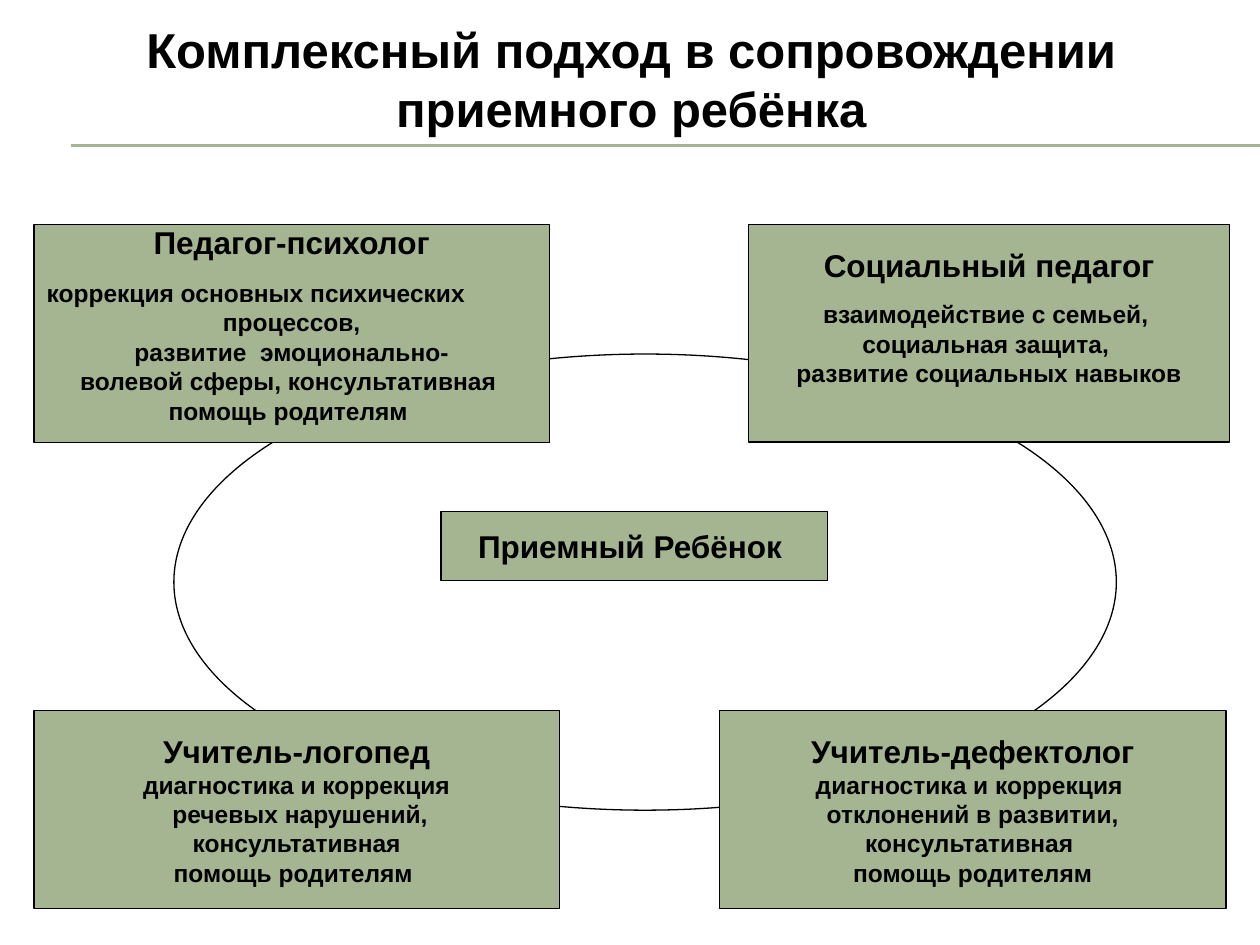
"""Builds a slide on the joint support of a foster child."""
from lxml import etree
from pptx import Presentation
from pptx.dml.color import RGBColor
from pptx.enum.shapes import MSO_CONNECTOR as LINK, MSO_SHAPE as SHAPE
from pptx.enum.text import MSO_ANCHOR as ANCHOR, MSO_AUTO_SIZE as AUTO, PP_ALIGN as ALIGN
from pptx.oxml.ns import qn
from pptx.util import Inches, Pt

GREEN, BLACK = "A5B592", "000000"


def tint(item, code):
    item.rgb = RGBColor.from_string(code)


def style(para, size):
    para.alignment = ALIGN.CENTER
    for run in para.runs:
        font = run.font
        font.name, font.size, font.bold = "Arial", Pt(size), True
        tint(font.color, BLACK)


deck = Presentation()
deck.slide_width, deck.slide_height = Inches(10), Inches(7.5)
slide = deck.slides.add_slide(deck.slide_layouts[1])
shapes = slide.shapes

for y in (1.15, 1.16):
    rule = shapes.add_connector(LINK.STRAIGHT, Inches(0.56), Inches(y), Inches(10), Inches(y))
    rule.line.width = Pt(0.75)
    tint(rule.line.color, GREEN)
    etree.SubElement(rule.element.spPr, qn("a:effectLst"))

title = shapes.title
title.left, title.top, title.width, title.height = Inches(0.51), Inches(0), Inches(9), Inches(1.25)
title.text_frame.text = "Комплексный подход в сопровождении приемного ребёнка"
title.text_frame.auto_size = AUTO.NONE
title.text_frame.vertical_anchor = ANCHOR.MIDDLE
style(title.text_frame.paragraphs[0], 28)

ring = shapes.add_shape(SHAPE.OVAL, Inches(1.38), Inches(2.81), Inches(7.48), Inches(3.62))
ring.shadow.inherit = False
ring.fill.background()
ring.line.width = Pt(0.75)
tint(ring.line.color, BLACK)

body = slide.placeholders[1]
shapes.element.append(body.element)

cards = [
    (body, 0.27, 1.78, 4.09, 1.73, 13, [
        "Педагог-психолог", "коррекция основных психических", "процессов,",
        "развитие  эмоционально-", "волевой сферы, консультативная ", "помощь родителям "]),
    (None, 3.5, 4.06, 3.07, 0.55, 0, ["Приемный Ребёнок "]),
    (None, 5.94, 1.78, 3.82, 1.73, 9, [
        "Социальный педагог", "взаимодействие с семьей, ", "социальная защита, ",
        "развитие социальных навыков"]),
    (None, 5.71, 5.64, 4.02, 1.57, 0, [
        "Учитель-дефектолог", "диагностика и коррекция ", "отклонений в развитии,",
        "консультативная ", "помощь родителям"]),
    (None, 0.27, 5.64, 4.17, 1.57, 0, [
        "Учитель-логопед", "диагностика и коррекция", " речевых нарушений,",
        " консультативная ", "помощь родителям "]),
]
for card, x, y, w, h, gap, lines in cards:
    if card is None:
        card = shapes.add_shape(SHAPE.RECTANGLE, 0, 0, Inches(w), Inches(h))
        card.shadow.inherit = False
    card.left, card.top, card.width, card.height = Inches(x), Inches(y), Inches(w), Inches(h)
    card.fill.solid()
    tint(card.fill.fore_color, GREEN)
    card.line.width = Pt(0.75)
    tint(card.line.color, BLACK)
    frame = card.text_frame
    frame.text = "\n".join(lines)
    frame.auto_size = AUTO.NONE
    frame.word_wrap = card is body
    frame.vertical_anchor = ANCHOR.TOP if card is body else ANCHOR.MIDDLE
    if lines[0] == "Социальный педагог":
        frame.margin_bottom = Inches(0.31)
    for i, para in enumerate(frame.paragraphs):
        style(para, 14 if i else 18)
        para.space_before = Pt(gap if i == 1 else 0)
        if card is body:
            props = para._p.get_or_add_pPr()
            props.set("marL", str(Inches(0.38)))
            props.set("indent", str(-Inches(0.38)))
            para.line_spacing = 0.8
            if i > 1:
                para.space_before = Pt(3.4)
            etree.SubElement(props, qn("a:buNone"))

body.text_frame.paragraphs[1].alignment = ALIGN.LEFT
deck.save("out.pptx")
